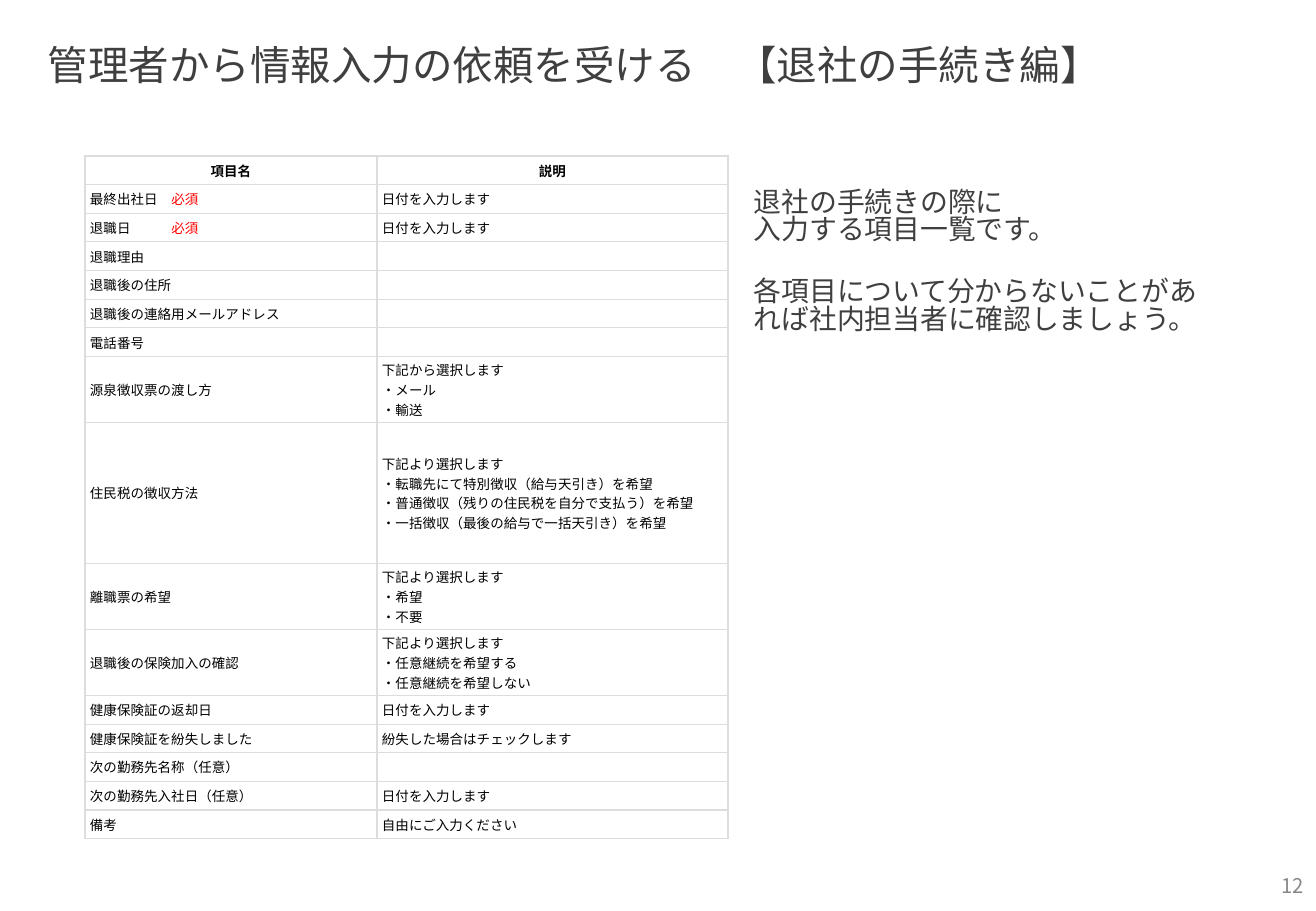
"""Build the slide listing the fields to fill in when leaving the company."""
from lxml import etree
from pptx import Presentation
from pptx.dml.color import RGBColor
from pptx.enum.text import MSO_ANCHOR, PP_ALIGN
from pptx.oxml.ns import qn
from pptx.util import Emu, Pt

FONT = "Noto Sans CJK JP"
GREY, BLACK, RED, WHITE, RULE = "3F3F3F", "000000", "FF0000", "FFFFFF", "DDDDDD"
PAGE_GREY = "888888"

TITLE = "管理者から情報入力の依頼を受ける　【退社の手続き編】"
GUIDE = [
    "退社の手続きの際に\v入力する項目一覧です。",
    "各項目について分からないことがあれば社内担当者に確認しましょう。",
]
PAGE = "12"
HEADINGS = ("項目名", "説明")
DATE = "日付を入力します"
MUST = "必須"
FIELDS = [
    ("最終出社日　", MUST, DATE),
    ("退職日　　　", MUST, DATE),
    ("退職理由", "", ""),
    ("退職後の住所", "", ""),
    ("退職後の連絡用メールアドレス", "", ""),
    ("電話番号", "", ""),
    ("源泉徴収票の渡し方", "", "下記から選択します\v・メール\v・輸送"),
    ("住民税の徴収方法", "",
     "下記より選択します\v・転職先にて特別徴収（給与天引き）を希望\v"
     "・普通徴収（残りの住民税を自分で支払う）を希望\v"
     "・一括徴収（最後の給与で一括天引き）を希望"),
    ("離職票の希望", "", "下記より選択します\v・希望\v・不要"),
    ("退職後の保険加入の確認", "",
     "下記より選択します\v・任意継続を希望する\v・任意継続を希望しない"),
    ("健康保険証の返却日", "", DATE),
    ("健康保険証を紛失しました", "", "紛失した場合はチェックします"),
    ("次の勤務先名称（任意）", "", ""),
    ("次の勤務先入社日（任意）", "", DATE),
    ("備考", "", "自由にご入力ください"),
]

TABLE_LEFT, TABLE_TOP, TABLE_HEIGHT = 85, 156, 683
COLUMNS = (292, 351)
TALL_ROWS = {7: 66, 8: 141, 9: 66, 10: 66}


def px(length):
    return Emu(round(length * 914400 / 121.5))


def rgb(code):
    return RGBColor.from_string(code)


def style(run, size, color, bold=False):
    run.font.size, run.font.bold, run.font.name = Pt(size), bold, FONT
    run.font.color.rgb = rgb(color)
    etree.SubElement(run.font._element, qn("a:ea"), typeface=FONT)


def write(slide, box, lines, size, color, spacing=1.0, gap=0,
          align=PP_ALIGN.LEFT, anchor=MSO_ANCHOR.TOP):
    frame = slide.shapes.add_textbox(*map(px, box)).text_frame
    frame.word_wrap, frame.vertical_anchor = True, anchor
    frame.text = "\n".join(lines)
    for index, paragraph in enumerate(frame.paragraphs):
        paragraph.alignment, paragraph.line_spacing = align, spacing
        paragraph.space_before = Pt(gap if index else 0)
        for run in paragraph.runs:
            style(run, size, color)


def fill_cell(cell, parts, heading=False):
    cell.vertical_anchor = MSO_ANCHOR.MIDDLE
    cell.margin_left = cell.margin_right = px(5)
    cell.margin_top = cell.margin_bottom = px(3)
    paragraph = cell.text_frame.paragraphs[0]
    paragraph.text = "".join(text for text, _ in parts[:1])
    for text, _ in parts[1:]:
        paragraph.add_run().text = text
    paragraph.alignment = PP_ALIGN.CENTER if heading else PP_ALIGN.LEFT
    for run in paragraph.runs:
        style(run, 8, RED if run.text == MUST else BLACK, heading)
    if not paragraph.runs:
        etree.SubElement(paragraph._p, qn("a:endParaRPr"), sz="800")
    properties = cell._tc.get_or_add_tcPr()
    for side in ("lnL", "lnR", "lnT", "lnB"):
        line = etree.SubElement(properties, qn(f"a:{side}"), w=str(Pt(0.75)))
        paint = etree.SubElement(line, qn("a:solidFill"))
        etree.SubElement(paint, qn("a:srgbClr"), val=RULE)
    cell.fill.solid()
    cell.fill.fore_color.rgb = rgb(WHITE)


def add_fields(slide):
    count = len(FIELDS) + 1
    short = (TABLE_HEIGHT - sum(TALL_ROWS.values())) / (count - len(TALL_ROWS))
    table = slide.shapes.add_table(
        count, len(COLUMNS), px(TABLE_LEFT), px(TABLE_TOP),
        px(sum(COLUMNS)), px(TABLE_HEIGHT)).table
    table.first_row = table.horz_banding = False
    for column, width in zip(table.columns, COLUMNS):
        column.width = px(width)
    for index, row in enumerate(table.rows):
        row.height = px(TALL_ROWS.get(index, short))
    for column, heading in enumerate(HEADINGS):
        fill_cell(table.cell(0, column), [(heading, BLACK)], True)
    for row, (item, required, description) in enumerate(FIELDS, 1):
        item_parts = [(item, BLACK)] + ([(required, RED)] if required else [])
        fill_cell(table.cell(row, 0), item_parts)
        fill_cell(table.cell(row, 1), [(description, BLACK)] if description else [])


def main():
    deck = Presentation()
    deck.slide_width, deck.slide_height = px(1316), px(911)
    slide = deck.slides.add_slide(deck.slide_layouts[6])
    write(slide, (1020, 861, 296, 49), [PAGE], 12, PAGE_GREY,
          align=PP_ALIGN.RIGHT, anchor=MSO_ANCHOR.MIDDLE)
    write(slide, (36, 40, 1131, 61), [TITLE], 24, GREY, spacing=0.9)
    add_fields(slide)
    write(slide, (742, 184, 473, 215), GUIDE, 16.5, GREY, spacing=0.83, gap=20)
    deck.save("out.pptx")


if __name__ == "__main__":
    main()
